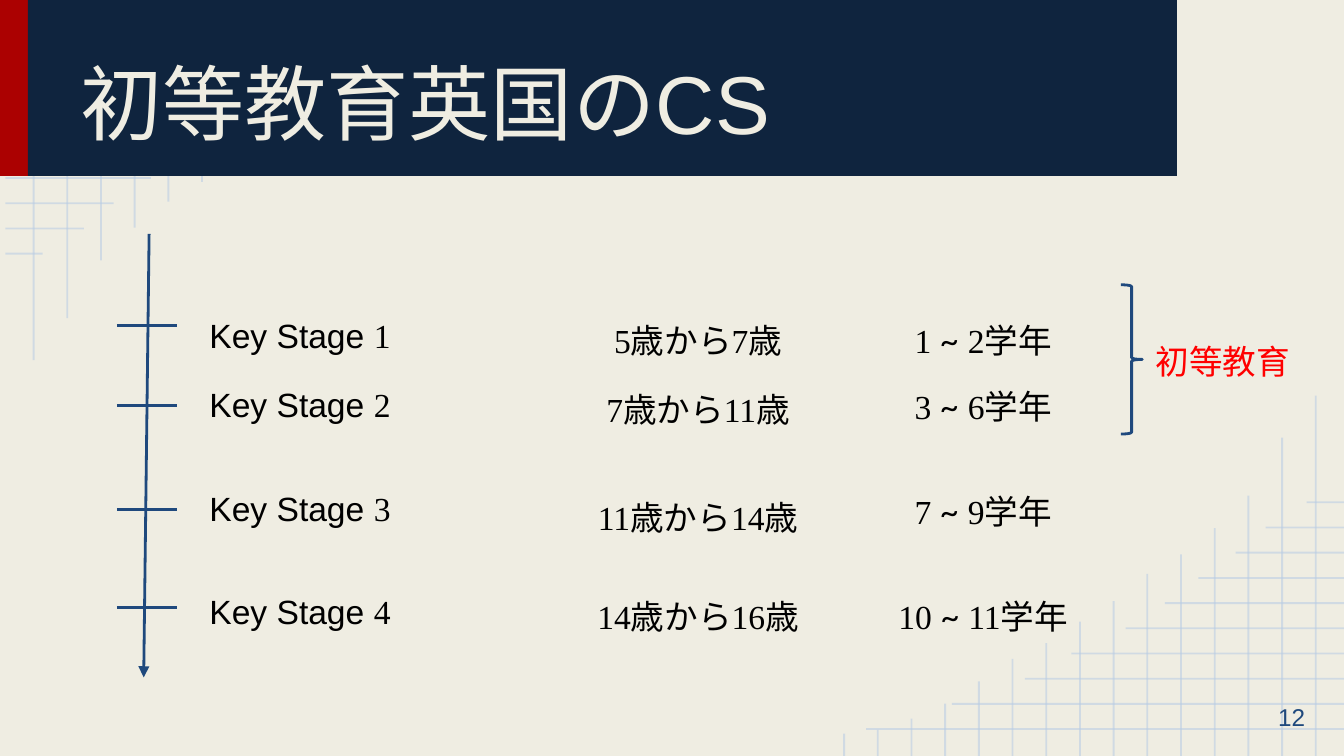
from dataclasses import dataclass

from lxml import etree
from pptx import Presentation
from pptx.dml.color import RGBColor
from pptx.enum.shapes import MSO_CONNECTOR, MSO_SHAPE
from pptx.enum.text import MSO_ANCHOR, PP_ALIGN
from pptx.oxml.ns import qn
from pptx.util import Pt

STRAIGHT = MSO_CONNECTOR.STRAIGHT
RECTANGLE, RIGHT_BRACE = MSO_SHAPE.RECTANGLE, MSO_SHAPE.RIGHT_BRACE
LEFT, CENTER, RIGHT = PP_ALIGN.LEFT, PP_ALIGN.CENTER, PP_ALIGN.RIGHT
TOP, MIDDLE, BOTTOM = MSO_ANCHOR.TOP, MSO_ANCHOR.MIDDLE, MSO_ANCHOR.BOTTOM

COLORS = {
    "paper": "EFEDE2",
    "grid": "B7CCE4",
    "accent": "AB0101",
    "band": "0F243E",
    "blue": "1F497D",
    "black": "000000",
    "red": "FF0000",
}
SANS, BODY, SERIF = "Arial", "Lato", "Times New Roman"
WIDTH, HEIGHT = 720, 405
BAND_TOP, BAND_HEIGHT = -0.7, 95
BAND_BOTTOM = BAND_TOP + BAND_HEIGHT

# Grid line lengths, from the slide corner inwards
GRID_ROWS = [256, 210, 171, 146, 117, 96, 78, 58, 42, 20]
GRID_COLUMNS = [193, 170.5, 139.5, 122, 108, 97.5, 83, 72, 60.5, 52, 40, 28, 20, 14, 12]
GRID_EDGE, FIRST_ROW, ROW_GAP = 2.9, 14.4, 13.5
FIRST_COLUMN, COLUMN_GAP = 18, 18.05


@dataclass
class Box:
    left: float
    top: float
    width: float
    height: float

    def lengths(self) -> list:
        return [Pt(v) for v in (self.left, self.top, self.width, self.height)]


@dataclass
class Run:
    text: str
    font: str


@dataclass
class Stage:
    number: str
    ages: tuple[str, str]
    years: tuple[str, str]
    tick_y: float
    name_top: float
    ages_top: float
    years_top: float


STAGES = [
    Stage("1", ("5", "7"), ("1", "2"), 174.2, 161.3, 164.2, 164.2),
    Stage("2", ("7", "11"), ("3", "6"), 217.4, 198.7, 200.9, 199.4),
    Stage("3", ("11", "14"), ("7", "9"), 272.9, 254.2, 259.2, 255.6),
    Stage("4", ("14", "16"), ("10", "11"), 325.4, 309.6, 311.8, 311.8),
]


def rgb(color: str) -> RGBColor:
    return RGBColor.from_string(COLORS[color])


def add_line(slide, start: tuple, end: tuple, color: str = "blue", width: float = 1.5):
    line = slide.shapes.add_connector(STRAIGHT, *(Pt(v) for v in (*start, *end)))
    line.line.color.rgb = rgb(color)
    line.line.width = Pt(width)
    etree.SubElement(line._element.spPr, qn("a:effectLst"))
    return line


def add_grid_line(slide, start: tuple, end: tuple) -> None:
    line = add_line(slide, start, end, "grid", 1)
    color = line._element.spPr.find(".//" + qn("a:srgbClr"))
    etree.SubElement(color, qn("a:alpha"), val="54000")


def add_grids(slide) -> None:
    """Draw the corner grid at bottom right, and its half turn where it shows below the band."""
    lines = []
    for i, length in enumerate(GRID_ROWS):
        y = FIRST_ROW + ROW_GAP * i
        lines.append(((GRID_EDGE, y), (GRID_EDGE + length, y)))
    for i, length in enumerate(GRID_COLUMNS):
        x = FIRST_COLUMN + COLUMN_GAP * i
        lines.append(((x, 0), (x, length)))
    for start, end in lines:
        if end[1] > BAND_BOTTOM:
            add_grid_line(slide, start, end)
        turned = [(WIDTH + GRID_EDGE - x, HEIGHT - y) for x, y in (start, end)]
        add_grid_line(slide, *turned)


def add_block(slide, box: Box, color: str) -> None:
    block = slide.shapes.add_shape(RECTANGLE, *box.lengths())
    block.shadow.inherit = False
    block.fill.solid()
    block.fill.fore_color.rgb = rgb(color)
    block.line.fill.background()


def add_text(slide, box: Box, runs: list[Run], size: float = 18, color: str = "black",
             align=LEFT, anchor=TOP) -> None:
    frame = slide.shapes.add_textbox(*box.lengths()).text_frame
    inset = Pt(7.2)
    frame_format = {
        "word_wrap": True, "vertical_anchor": anchor,
        "margin_left": inset, "margin_right": inset,
        "margin_top": inset, "margin_bottom": inset,
    }
    for attribute, value in frame_format.items():
        setattr(frame, attribute, value)
    paragraph = frame.paragraphs[0]
    paragraph.alignment = align
    for part in runs:
        run = paragraph.add_run()
        run.text = part.text
        for attribute, value in {"name": part.font, "size": Pt(size)}.items():
            setattr(run.font, attribute, value)
        run.font.color.rgb = rgb(color)


def add_stage(slide, stage: Stage) -> None:
    add_line(slide, (62.6, stage.tick_y), (95, stage.tick_y))
    add_text(slide, Box(105.1, stage.name_top, 118, 37.4),
             [Run("Key Stage ", SANS), Run(stage.number, SERIF)])
    first_age, last_age = stage.ages
    add_text(slide, Box(288.7, stage.ages_top, 170.6, 32.4),
             [Run(first_age, SERIF), Run("歳から", BODY), Run(last_age, SERIF), Run("歳", BODY)],
             align=CENTER)
    first_year, last_year = stage.years
    add_text(slide, Box(441.4, stage.years_top, 170.6, 32.4),
             [Run(first_year + " ", SERIF), Run("~ ", BODY), Run(last_year, SERIF),
              Run("学年", BODY)],
             align=CENTER)


def add_primary_bracket(slide) -> None:
    brace = slide.shapes.add_shape(RIGHT_BRACE, *Box(600.5, 152.6, 11.5, 80).lengths())
    brace.shadow.inherit = False
    brace.adjustments[0] = 0.08
    brace.adjustments[1] = 0.5
    brace.fill.background()
    brace.line.color.rgb = rgb("blue")
    brace.line.width = Pt(1.5)
    add_text(slide, Box(612, 175.7, 92.9, 60.5), [Run("初等教育", BODY)], color="red")


def main() -> None:
    deck = Presentation()
    deck.slide_width, deck.slide_height = Pt(WIDTH), Pt(HEIGHT)
    slide = deck.slides.add_slide(deck.slide_layouts[6])
    slide.background.fill.solid()
    slide.background.fill.fore_color.rgb = rgb("paper")

    add_grids(slide)
    add_block(slide, Box(0, BAND_TOP, 15, BAND_HEIGHT), "accent")
    add_block(slide, Box(15, BAND_TOP, 615.5, BAND_HEIGHT), "band")
    add_text(slide, Box(36, 8, 576, 80), [Run("初等教育英国のCS", SANS)], 44, "paper",
             anchor=BOTTOM)
    add_text(slide, Box(663, 363.6, 43.2, 41), [Run("12", SANS)], 13, "blue", RIGHT, MIDDLE)

    timeline = add_line(slide, (79.9, 125.3), (77, 362.9))
    etree.SubElement(timeline.line._get_or_add_ln(), qn("a:tailEnd"), type="triangle")
    for stage in STAGES:
        add_stage(slide, stage)
    add_primary_bracket(slide)
    deck.save("out.pptx")


if __name__ == "__main__":
    main()
